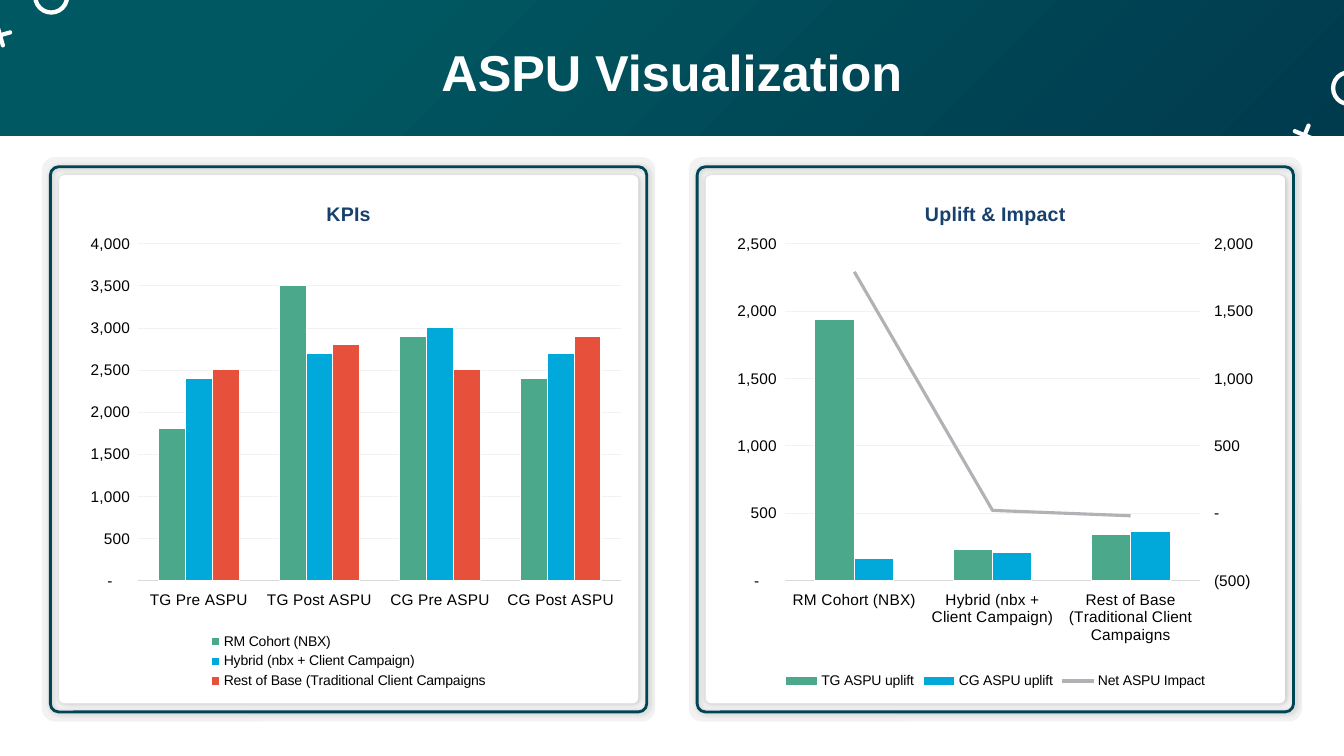
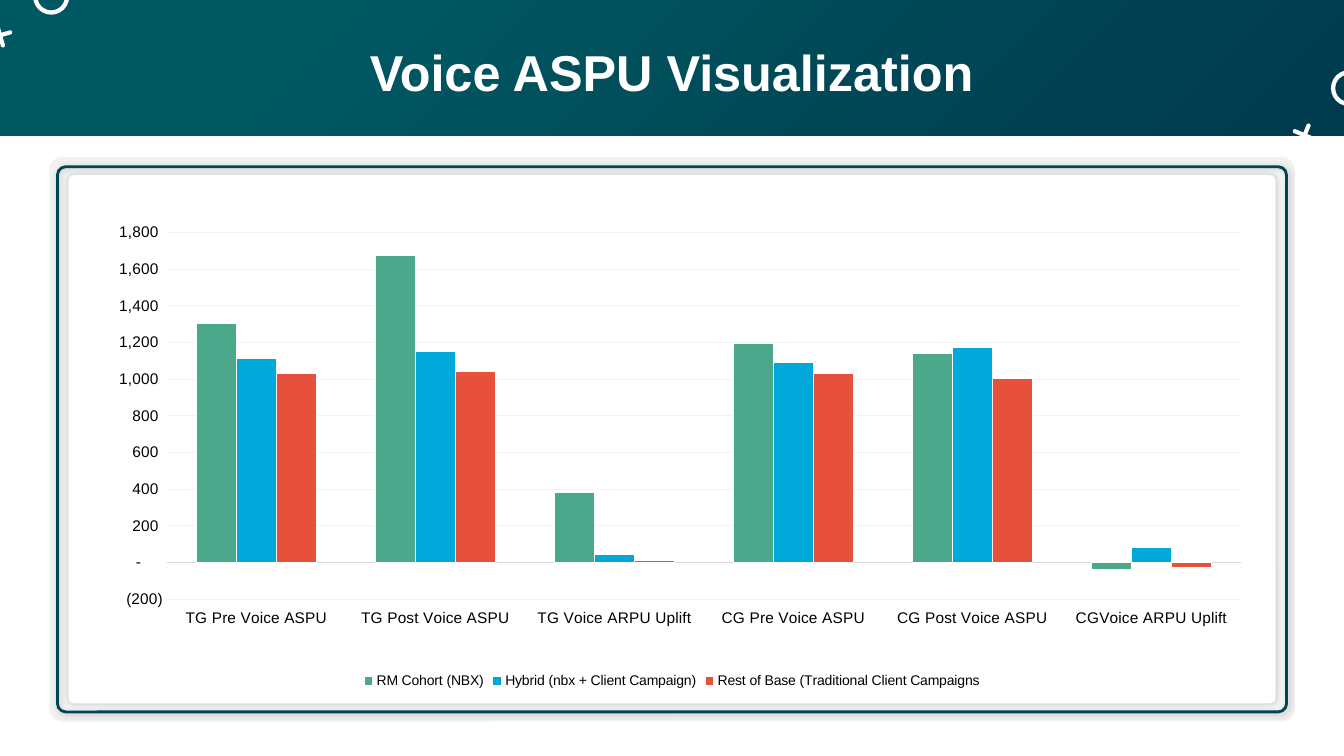
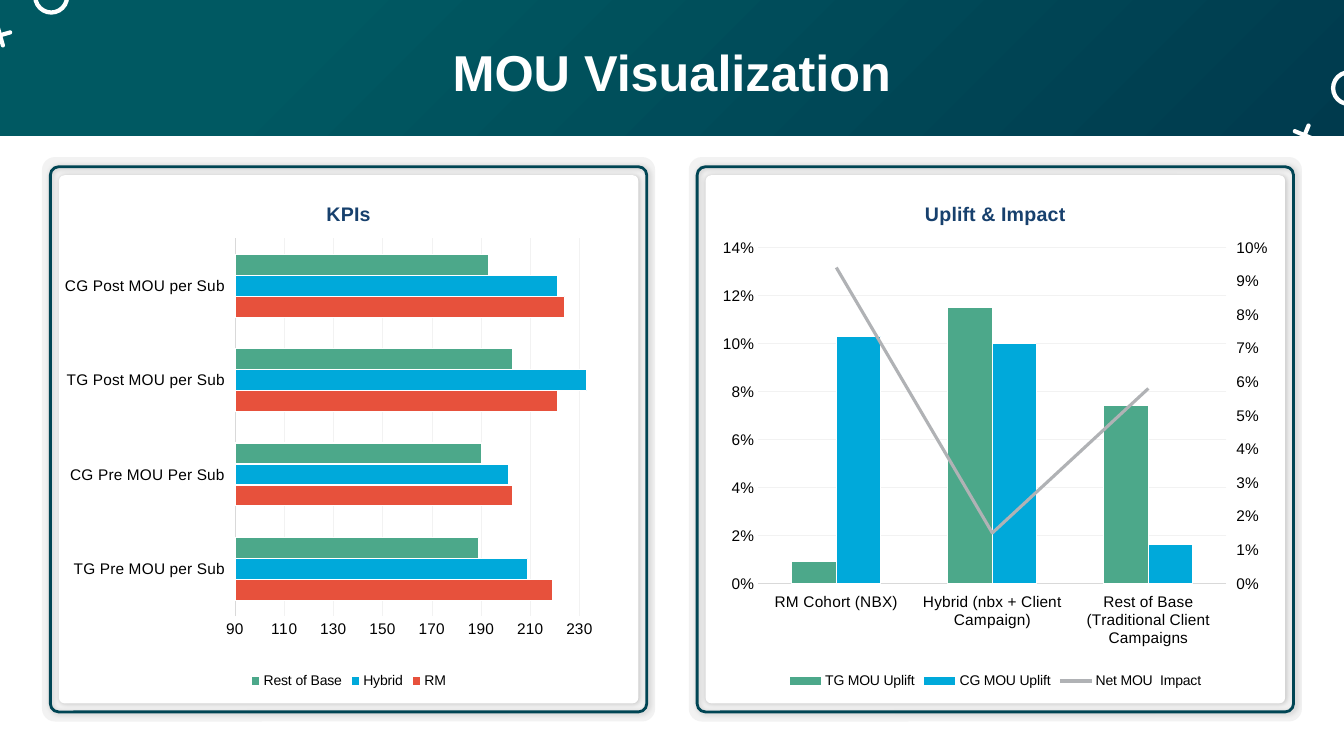
"""Build three chart slides that share a banner, framed panels and a chart style."""
from copy import deepcopy
from dataclasses import dataclass

from pptx import Presentation
from pptx import util as u
from pptx.chart import data
from pptx.dml.color import RGBColor
from pptx.enum import chart as ch, shapes, text
from pptx.oxml import ns, parse_xml

COLS, ROWS = 160, 90
CELL = u.Inches(1 / 12)
COUNT = '_(* #,##0_);_(* \\(#,##0\\);_(* "-"??_);_(@_)'
PERCENT = "0%"
COLUMN, BAR = ch.XL_CHART_TYPE.COLUMN_CLUSTERED, ch.XL_CHART_TYPE.BAR_CLUSTERED
COHORTS = ["RM Cohort (NBX)", "Hybrid (nbx + Client Campaign)",
           "Rest of Base (Traditional Client Campaigns"]


@dataclass(frozen=True)
class Theme:
    """Colours and type sizes of the deck."""
    font: str = "Arial"
    white: str = "FFFFFF"
    black: str = "000000"
    navy: str = "002942"
    teal: str = "005962"
    frame: str = "004554"
    mat: str = "F2F2F2"
    axis: str = "D9D9D9"
    heading: str = "17406D"
    green: str = "4CA88A"
    blue: str = "00A9DA"
    red: str = "E7513C"
    grey: str = "B0B2B5"
    title_size: int = 36
    heading_size: int = 14
    label_size: int = 11
    legend_size: int = 10


T = Theme()


def rgb(value):
    """Return a colour object for a hex value."""
    return RGBColor.from_string(value)


def xml(tag, body, prefix="a"):
    """Return an element of the drawing or chart namespace."""
    return parse_xml(f"<{prefix}:{tag} {ns.nsdecls('a', 'c')}>{body}</{prefix}:{tag}>")


def style(font, size, color, bold=False):
    """Set the deck's typeface with a size and colour."""
    font.name, font.size, font.bold = T.font, u.Pt(size), bold
    font.color.rgb = rgb(color)


def place(plot_area, x, y, w, h, target):
    """Fix the plot area as shares of the chart."""
    for old in plot_area.findall(ns.qn("c:layout")):
        plot_area.remove(old)
    sizes = "".join(f'<c:{k} val="{v}"/>' for k, v in zip("xywh", (x, y, w, h)))
    plot_area.insert(0, xml("layout", f'<c:manualLayout><c:layoutTarget val="{target}"/>'
                            '<c:xMode val="edge"/><c:yMode val="edge"/>'
                            f"{sizes}</c:manualLayout>", "c"))


def line_on_right(plot_area):
    """Turn the last bar series into a line on a second value axis."""
    bars = plot_area.find(ns.qn("c:barChart"))
    ser = bars.findall(ns.qn("c:ser"))[-1]
    for extra in ser.findall(ns.qn("c:invertIfNegative")):
        ser.remove(extra)
    line = xml("lineChart", '<c:grouping val="standard"/><c:varyColors val="0"/>'
               '<c:marker val="1"/><c:axId val="501"/><c:axId val="502"/>', "c")
    line.insert(2, ser)
    bars.addnext(line)
    last = plot_area.find(ns.qn("c:valAx"))
    for tag, own, other in (("c:valAx", "502", "501"), ("c:catAx", "501", "502")):
        axis = deepcopy(plot_area.find(ns.qn(tag)))
        axis.find(ns.qn("c:axId")).set("val", own)
        axis.find(ns.qn("c:crossAx")).set("val", other)
        if tag == "c:valAx":
            axis.remove(axis.find(ns.qn("c:majorGridlines")))
            axis.find(ns.qn("c:axPos")).set("val", "r")
            axis.find(ns.qn("c:majorTickMark")).set("val", "out")
            axis.find(ns.qn("c:crosses")).set("val", "max")
        else:
            axis.find(ns.qn("c:delete")).set("val", "1")
        last.addnext(axis)
        last = axis


class Deck:
    """Hold the presentation, its style and the current slide."""

    def __init__(self):
        """Start an empty wide presentation."""
        self.prs = Presentation()
        self.prs.slide_width, self.prs.slide_height = COLS * CELL, ROWS * CELL
        self.layout = self.prs.slide_layouts[5]
        self.s = None

    def box(self, col, row, cols, rows):
        """Convert grid units to lengths."""
        return [u.Emu(round(v * CELL)) for v in (col, row, cols, rows)]

    def shape(self, kind, at, fill=None, line=None, adj=None, turn=0, shadow=False):
        """Add a preset shape."""
        sp = self.s.shapes.add_shape(kind, *self.box(*at))
        sp.shadow.inherit = False
        sp.rotation = turn
        if adj is not None:
            sp.adjustments[0] = adj
        if fill:
            sp.fill.solid()
            sp.fill.fore_color.rgb = rgb(fill)
        else:
            sp.fill.background()
        if line:
            sp.line.color.rgb, sp.line.width = rgb(line), u.Pt(2)
        else:
            sp.line.fill.background()
        if shadow:
            effects = sp.element.spPr.find(ns.qn("a:effectLst"))
            effects.append(parse_xml(
                f'<a:outerShdw {ns.nsdecls("a")} blurRad="50800" dist="12700" dir="2700000">'
                f'<a:srgbClr val="{T.black}"><a:alpha val="20000"/></a:srgbClr></a:outerShdw>'))
        return sp

    def ornament(self, ring, cross, turn):
        """Draw a ring and a tilted cross around their centres."""
        kinds = shapes.MSO_SHAPE
        x, y = cross
        parts = [self.shape(kinds.DONUT, (ring[0] - 2.15, ring[1] - 2.15, 4.3, 4.3),
                            T.white, adj=0.12)]
        for angle in (turn, turn + 90):
            parts.append(self.shape(kinds.ROUNDED_RECTANGLE, (x - 1.5, y - 0.25, 3, 0.5),
                                    T.white, adj=0.5, turn=angle))
        return parts

    def banner(self):
        """Draw the banner once and move it to the layout."""
        rect = shapes.MSO_SHAPE.RECTANGLE
        back = self.shape(rect, (0, 0, COLS, ROWS))
        stops = "".join(f'<a:gs pos="{pos}000"><a:srgbClr val="{c}"/></a:gs>'
                        for pos, c in ((0, T.navy), (85, T.teal), (100, T.teal)))
        spPr = back.element.spPr
        spPr.replace(spPr.find(ns.qn("a:noFill")), xml(
            "gradFill", f'<a:gsLst>{stops}</a:gsLst><a:path path="circle">'
            '<a:fillToRect l="100000" t="100000"/></a:path>'
            '<a:tileRect r="-100000" b="-100000"/>'))
        parts = [back, *self.ornament((6.1, -0.4), (0, 4.2), -15.8),
                 self.shape(rect, (0, 16.2, COLS, ROWS - 16.2), T.white),
                 *self.ornament((160.6, 10.5), (155.3, 16.1), 22.5)]
        for i, sp in enumerate(parts):
            self.layout.shapes.element.insert(2 + i, sp.element)

    def slide(self, title):
        """Add a slide with its title."""
        self.s = self.prs.slides.add_slide(self.layout)
        if len(self.prs.slides) == 1:
            self.banner()
        sp = self.s.shapes.title
        sp.left, sp.top, sp.width, sp.height = self.box(5.84, 4.7, 148.32, 7.7)
        tf = sp.text_frame
        tf.word_wrap, tf.auto_size = True, text.MSO_AUTO_SIZE.NONE
        tf.vertical_anchor = text.MSO_ANCHOR.MIDDLE
        p = tf.paragraphs[0]
        p.alignment = text.PP_ALIGN.CENTER
        r = p.add_run()
        r.text = title
        style(r.font, T.title_size, T.white, True)

    def panel(self, col, cols, card=2, chart=2.7):
        """Draw a framed card and return the room for its chart."""
        layers = ((0, 0, 0.023, T.mat, None), (card, 2.16, 0.011, T.white, None),
                  (1, 1.15, 0.015, None, T.frame))
        for dx, dy, adj, fill, line in layers:
            self.shape(shapes.MSO_SHAPE.ROUNDED_RECTANGLE,
                       (col + dx, 18.7 + dy, cols - 2 * dx, 67.2 - 2 * dy),
                       fill, line, adj, shadow=dx > 0)
        return col + chart, 21.7, cols - 2 * chart, 60.8

    def chart(self, at, cats, series, plot, title=None, kind=COLUMN, fmt=COUNT,
              target="inner", combo=False, scale=None):
        """Add a bar chart, with its last series as a line when combo is set."""
        cd = data.CategoryChartData()
        cd.categories = cats
        for name, _, values in series:
            cd.add_series(name, values)
        c = self.s.shapes.add_chart(kind, *self.box(*at), cd).chart
        style(c.font, T.legend_size, T.black)
        c.has_title = title is not None
        if title:
            r = c.chart_title.text_frame.paragraphs[0].add_run()
            r.text = title
            style(r.font, T.heading_size, T.heading, True)
        c.has_legend = True
        c.legend.position, c.legend.include_in_layout = ch.XL_LEGEND_POSITION.BOTTOM, False
        style(c.legend.font, T.legend_size, T.black)
        self.axes(c, fmt, scale)
        plot_area = c.plots[0]._element.getparent()
        place(plot_area, *plot, target)
        if combo:
            line_on_right(plot_area)
        colors = {name: color for name, color, _ in series}
        for group in c.plots:
            group.vary_by_categories = False
            for ser in group.series:
                self.paint(ser, colors[ser.name])
        c.plots[0].gap_width = 150

    def axes(self, c, fmt, scale):
        """Format both axes of a chart."""
        cat, val = c.category_axis, c.value_axis
        for axis in (cat, val):
            axis.major_tick_mark = axis.minor_tick_mark = ch.XL_TICK_MARK.NONE
            style(axis.tick_labels.font, T.label_size, T.black)
        cat.tick_label_position = ch.XL_TICK_LABEL_POSITION.LOW
        cat.format.line.color.rgb, cat.format.line.width = rgb(T.axis), u.Pt(0.25)
        val.format.line.fill.background()
        val.has_major_gridlines = True
        grid = val.major_gridlines.format.line
        grid.color.rgb, grid.width = rgb(T.mat), u.Pt(0.25)
        val.tick_labels.number_format = fmt
        val.tick_labels.number_format_is_linked = False
        if scale:
            val.minimum_scale, val.maximum_scale, val.major_unit = scale

    def paint(self, ser, color):
        """Colour a bar or line series."""
        line = ser.format.line
        if hasattr(ser, "smooth"):
            ser.smooth = False
            ser.marker.style = ch.XL_MARKER_STYLE.NONE
            line.color.rgb, line.width = rgb(color), u.Pt(2.25)
        else:
            ser.invert_if_negative = False
            ser.format.fill.solid()
            ser.format.fill.fore_color.rgb = rgb(color)
            line.color.rgb, line.width = rgb(T.white), u.Pt(0.75)


def cohorts(*values):
    """Pair the cohorts with their colours and values."""
    return list(zip(COHORTS, (T.green, T.blue, T.red), values))


def uplift(measure, *values):
    """Pair the uplift series of a measure with colours and values."""
    names = f"TG {measure} Uplift", f"CG {measure} Uplift", f"Net {measure}  Impact"
    if measure == "ASPU":
        names = "TG ASPU uplift", "CG ASPU uplift", "Net ASPU Impact"
    return list(zip(names, (T.green, T.blue, T.grey), values))


def main():
    """Build and save the deck."""
    deck = Deck()
    left, right = (5, 73), (82, 73)

    deck.slide("ASPU Visualization")
    deck.chart(deck.panel(*left),
               ["TG Pre ASPU", "TG Post ASPU", "CG Pre ASPU", "CG Post ASPU"],
               cohorts((1800, 3500, 2900, 2400), (2400, 2700, 3000, 2700),
                       (2500, 2800, 2500, 2900)),
               (0.13, 0.12, 0.85, 0.66), "KPIs")
    deck.chart(deck.panel(*right), COHORTS,
               uplift("ASPU", (1940, 230, 340), (160, 210, 360), (1790, 20, -20)),
               (0.13, 0.12, 0.73, 0.66), "Uplift & Impact", combo=True)

    deck.slide("Voice ASPU Visualization")
    deck.chart(deck.panel(5.84, 148.32, 2.3, 3.6),
               ["TG Pre Voice ASPU", "TG Post Voice ASPU", "TG Voice ARPU Uplift",
                "CG Pre Voice ASPU", "CG Post Voice ASPU", "CGVoice ARPU Uplift"],
               cohorts((1300, 1670, 380, 1190, 1140, -40), (1110, 1150, 40, 1090, 1170, 80),
                       (1030, 1040, 10, 1030, 1000, -30)),
               (0.03, 0.08, 0.95, 0.79), target="outer")

    deck.slide("MOU Visualization")
    deck.chart(deck.panel(*left),
               ["TG Pre MOU per Sub", "CG Pre MOU Per Sub", "TG Post MOU per Sub",
                "CG Post MOU per Sub"],
               [("RM", T.red, (219, 203, 221, 224)),
                ("Hybrid", T.blue, (209, 201, 233, 221)),
                ("Rest of Base", T.green, (189, 190, 203, 193))],
               (0.3, 0.11, 0.65, 0.74), "KPIs", BAR, scale=(90, 240, 20))
    deck.chart(deck.panel(*right), COHORTS,
               uplift("MOU", (0.009, 0.115, 0.074), (0.103, 0.1, 0.016),
                      (0.094, 0.015, 0.058)),
               (0.02, 0.11, 0.96, 0.8), "Uplift & Impact", fmt=PERCENT,
               target="outer", combo=True)
    deck.prs.save("out.pptx")


if __name__ == "__main__":
    main()
